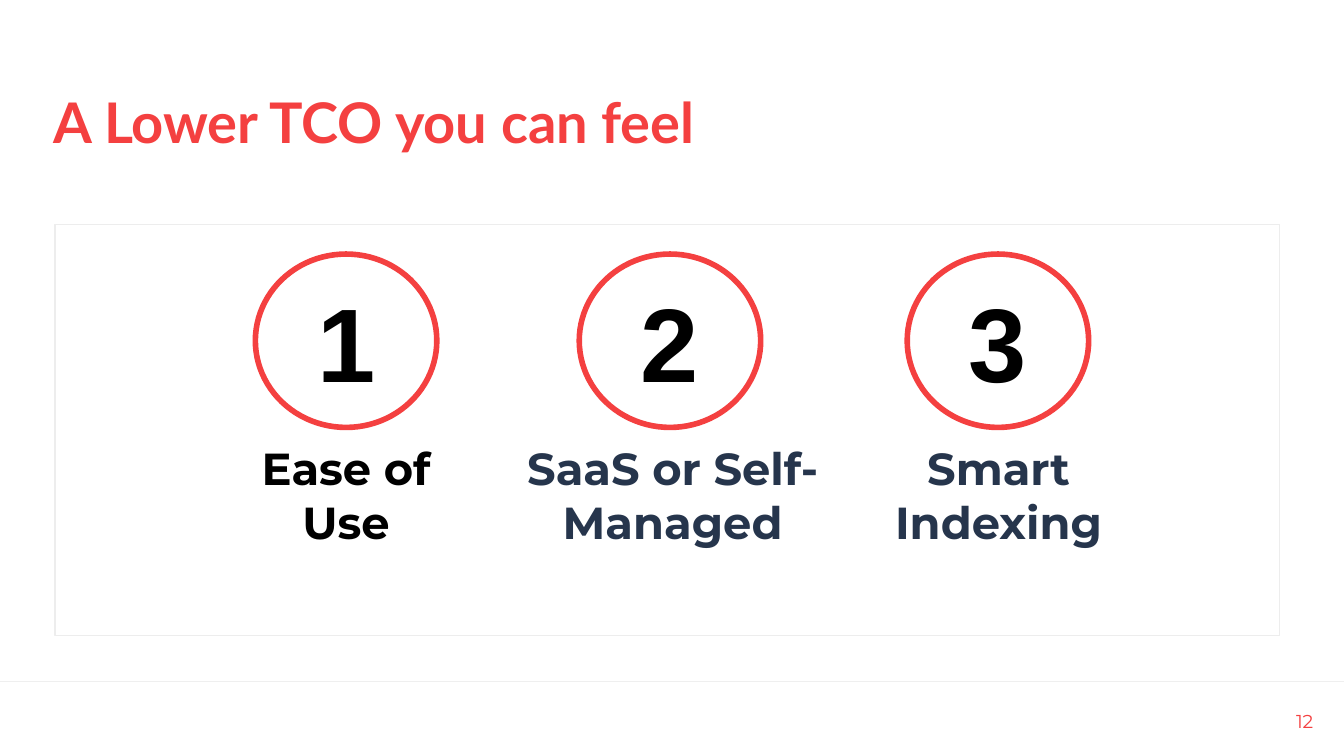
from dataclasses import dataclass

from pptx import Presentation
from pptx.dml.color import RGBColor
from pptx.enum.shapes import MSO_SHAPE as Shape
from pptx.enum.text import MSO_ANCHOR as Anchor, PP_ALIGN as Align
from pptx.util import Inches, Pt

COLORS = {
    "white": "FFFFFF",
    "black": "000000",
    "red": "F44040",
    "navy": "26354C",
    "panel_line": "EDEDED",
    "footer_line": "EFEFEF",
}


@dataclass
class Box:
    left: float
    top: float
    width: float
    height: float

    def lengths(self) -> list:
        return [Inches(v) for v in (self.left, self.top, self.width, self.height)]


@dataclass
class Style:
    font: str
    size: float
    color: str
    bold: bool = True
    align: Align = Align.CENTER
    anchor: Anchor = Anchor.TOP
    inset: float = 0.1  # top and bottom


@dataclass
class Benefit:
    label: str
    color: str
    circle_left: float
    label_box: Box


BENEFITS = [
    Benefit("Ease of Use", "black", 1.9, Box(1.8, 3.23, 1.55, 0.91)),
    Benefit("SaaS or Self-Managed", "navy", 4.31, Box(3.69, 3.23, 2.63, 1.38)),
    Benefit("Smart Indexing", "navy", 6.75, Box(6.48, 3.23, 1.9, 1.38)),
]


def rgb(name: str) -> RGBColor:
    return RGBColor.from_string(COLORS[name])


def write(sp, text: str, style: Style) -> None:
    tf = sp.text_frame
    tf.word_wrap = True
    tf.vertical_anchor = style.anchor
    tf.margin_left = tf.margin_right = Inches(0.1)
    tf.margin_top = tf.margin_bottom = Inches(style.inset)
    p = tf.paragraphs[0]
    p.alignment = style.align
    r = p.add_run()
    r.text = text
    r.font.name = style.font
    r.font.size = Pt(style.size)
    r.font.bold = style.bold
    r.font.color.rgb = rgb(style.color)


def add_text(slide, box: Box, text: str, style: Style) -> None:
    write(slide.shapes.add_textbox(*box.lengths()), text, style)


def add_outline(slide, kind: Shape, box: Box, line: str, weight: float,
                fill: str = ""):
    sp = slide.shapes.add_shape(kind, *box.lengths())
    sp.shadow.inherit = False
    if fill:
        sp.fill.solid()
        sp.fill.fore_color.rgb = rgb(fill)
    else:
        sp.fill.background()
    sp.line.color.rgb = rgb(line)
    sp.line.width = Pt(weight)
    return sp


def main() -> None:
    # Widescreen slide, 16:9
    prs = Presentation()
    prs.slide_width, prs.slide_height = Inches(10), Inches(10 * 9 / 16)
    slide = prs.slides.add_slide(prs.slide_layouts[6])

    # Footer band and content panel
    add_outline(slide, Shape.RECTANGLE, Box(-0.04, 5.07, 10.09, 0.66),
                "footer_line", 0.75, "white")
    add_outline(slide, Shape.RECTANGLE, Box(0.41, 1.67, 9.11, 3.06),
                "panel_line", 0.75, "white")

    # Page number and title
    add_text(slide, Box(9.27, 5.18, 0.6, 0.37), "12",
             Style("Montserrat", 10, "red", False, Align.RIGHT, Anchor.MIDDLE))
    add_text(slide, Box(0.3, 0.55, 6.91, 0.96), "A Lower TCO you can feel",
             Style("Lato", 30, "red", align=Align.LEFT))

    # Numbered benefits
    number_style = Style("Arial", 56, "black", anchor=Anchor.MIDDLE)
    for number, item in enumerate(BENEFITS, start=1):
        add_text(slide, item.label_box, item.label,
                 Style("Montserrat", 24, item.color, inset=0.05))
        circle = add_outline(slide, Shape.OVAL,
                             Box(item.circle_left, 1.89, 1.35, 1.29), "red", 3)
        write(circle, str(number), number_style)

    prs.save("out.pptx")


if __name__ == "__main__":
    main()
